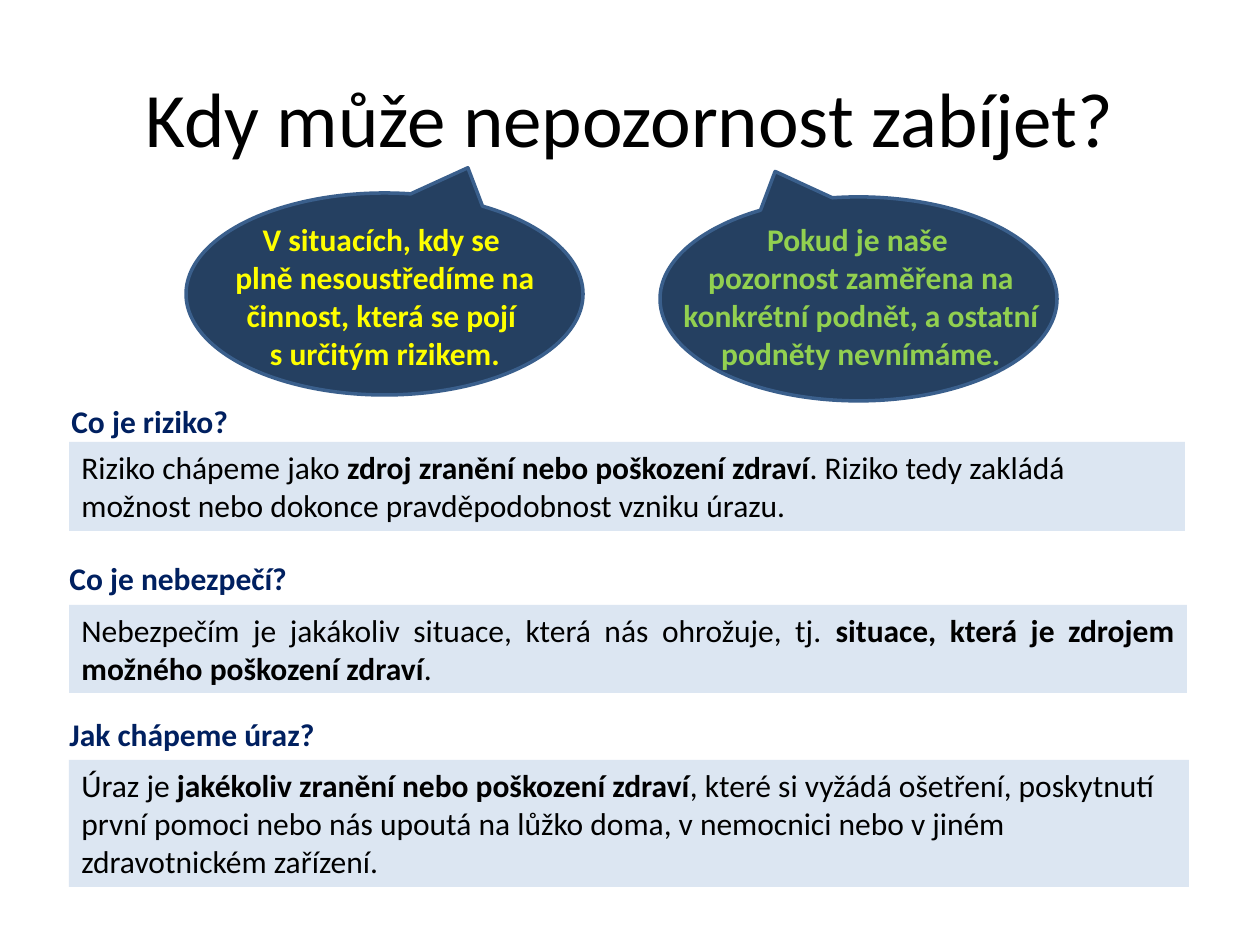
from dataclasses import dataclass

from pptx import Presentation
from pptx.dml.color import RGBColor as RGB
from pptx.enum.shapes import MSO_SHAPE as SHAPE
from pptx.enum.text import MSO_ANCHOR as ANCHOR, PP_ALIGN as ALIGN
from pptx.util import Emu, Pt

SCALE = 914400 / 126


@dataclass(frozen=True)
class Theme:
    font: str = "Calibri"
    title_size: int = 44
    text_size: int = 18
    text: str = "000000"
    heading: str = "002060"
    panel: str = "DCE6F2"
    bubble: str = "254061"
    outline: str = "3A5F8C"
    yellow: str = "FFFF00"
    green: str = "92D050"


T = Theme()


def px(*values):
    return [Emu(round(v * SCALE)) for v in values]


def write(tf, paragraphs, size=T.text_size, color=T.text, bold=False,
          align=ALIGN.LEFT, anchor=ANCHOR.TOP):
    tf.word_wrap = True
    tf.vertical_anchor = anchor
    for i, parts in enumerate(paragraphs):
        p = tf.add_paragraph() if i else tf.paragraphs[0]
        p.alignment = align
        for j, part in enumerate(parts):
            for k, line in enumerate(part.split("\n")):
                if k:
                    p.add_line_break()
                r = p.add_run()
                r.text = line
                r.font.name = T.font
                r.font.size = Pt(size)
                r.font.bold = bold or j % 2 == 1
                r.font.color.rgb = RGB.from_string(color)


def add_text(s, box, paragraphs, **fmt):
    write(s.shapes.add_textbox(*px(*box)).text_frame, paragraphs, **fmt)


def add_filled(s, kind, box, fill):
    sp = s.shapes.add_shape(kind, *px(*box))
    sp.shadow.inherit = False
    sp.fill.solid()
    sp.fill.fore_color.rgb = RGB.from_string(fill)
    sp.line.fill.background()
    return sp


def add_title(s, box, text):
    sp = s.shapes.title
    sp.left, sp.top, sp.width, sp.height = px(*box)
    write(sp.text_frame, [[text]], size=T.title_size,
          align=ALIGN.CENTER, anchor=ANCHOR.MIDDLE)


def add_bubble(s, box, tip_x, text_box, paragraphs, color):
    x, y, _, _ = box
    dx, dy, w, h = text_box
    sp = add_filled(s, SHAPE.OVAL_CALLOUT, box, T.bubble)
    sp.adjustments[0] = tip_x
    sp.adjustments[1] = -0.625
    sp.line.color.rgb = RGB.from_string(T.outline)
    sp.line.width = Pt(2)
    add_text(s, (x + dx, y + dy, w, h), paragraphs,
             color=color, bold=True, align=ALIGN.CENTER)


def add_definition(s, box, panel_dy, heading, parts, heading_dx=-12, align=ALIGN.LEFT):
    x, y, w, h = box
    add_text(s, (x + heading_dx, y, 1121, 50), [[heading]], color=T.heading, bold=True)
    sp = add_filled(s, SHAPE.RECTANGLE, (x, y + panel_dy, w, h - panel_dy), T.panel)
    write(sp.text_frame, [parts], align=align)


def main():
    prs = Presentation()
    prs.slide_width, prs.slide_height = px(1260, 945)
    s = prs.slides.add_slide(prs.slide_layouts[5])

    add_title(s, (63, 38, 1134, 157), "Kdy může nepozornost zabíjet?")
    add_definition(s, (69, 396, 1116, 135), 46, "Co je riziko?", [
        "Riziko chápeme jako ",
        "zdroj zranění nebo poškození zdraví",
        ". Riziko tedy zakládá možnost nebo dokonce pravděpodobnost vzniku úrazu.",
    ], heading_dx=-10)
    add_definition(s, (69, 553, 1118, 140), 52, "Co je nebezpečí?", [
        "Nebezpečím je jakákoliv situace, která nás ohrožuje, tj. ",
        "situace, která je zdrojem možného poškození zdraví",
        ".",
    ], align=ALIGN.JUSTIFY)
    add_definition(s, (69, 709, 1120, 178), 51, "Jak chápeme úraz?", [
        "Úraz je ",
        "jakékoliv zranění nebo poškození zdraví",
        ", které si vyžádá ošetření, poskytnutí první pomoci nebo nás upoutá "
        "na lůžko doma, v nemocnici nebo v jiném zdravotnickém zařízení.",
    ])
    add_bubble(s, (186, 193, 397, 202), 0.21, (37, 21, 324, 165), [
        ["V situacích, kdy se \nplně nesoustředíme na činnost, která se pojí "],
        ["s určitým rizikem."],
    ], T.yellow)
    add_bubble(s, (660, 197, 397, 204), -0.21, (-26, 17, 454, 165), [
        ["Pokud je naše \npozornost zaměřena na konkrétní podnět, a ostatní "
         "podněty nevnímáme."],
    ], T.green)
    prs.save("out.pptx")


if __name__ == "__main__":
    main()
